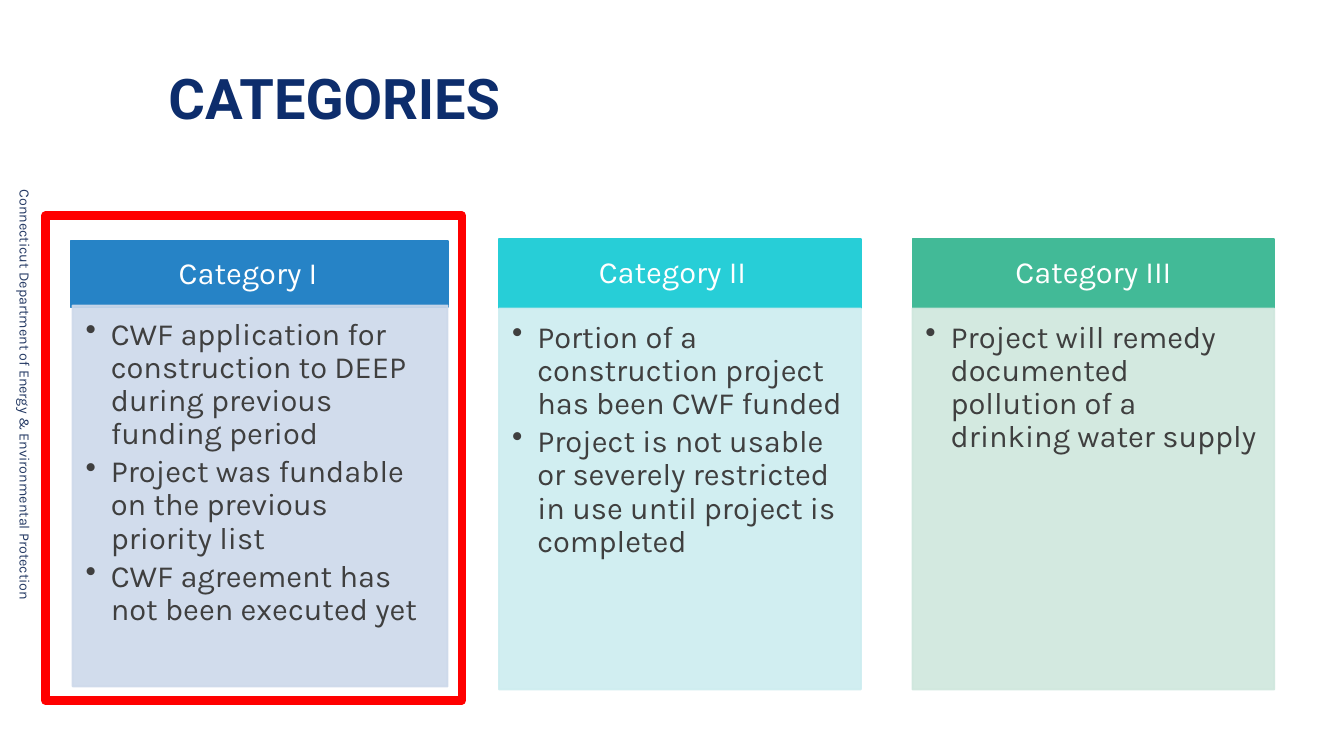
from lxml import etree
from pptx import Presentation, util as u
from pptx.dml.color import RGBColor
from pptx.enum import shapes, text
from pptx.oxml.ns import qn

WIDTH, HEIGHT = u.Inches(13.33), u.Inches(7.5)

# Header and panel boxes: left, top, width, height in percent of the slide.
# Each trailing blank of a header is given as extra right inset, in inches.
CATEGORIES = [
    dict(label="Category I", trailing=0.22, header_color="2683C6", panel_color="CDD9EA",
         header_box=(5.25, 31.87, 28.06, 8.8), panel_box=(5.4, 40.4, 27.91, 50.4),
         criteria=["CWF application for construction to DEEP during previous funding period",
                   "Project was fundable on the previous priority list",
                   "CWF agreement has not been executed yet"]),
    dict(label="Category\u00a0II".replace("\u00a0", " "), trailing=0.15,
         header_color="27CED7", panel_color="CDEDF0",
         header_box=(37.13, 31.6, 26.93, 9.2), panel_box=(37.13, 40.8, 26.93, 50.4),
         criteria=["Portion of a construction project has been CWF funded",
                   "Project is not usable or severely restricted in use until project is completed"]),
    dict(label="Category III", trailing=0, header_color="42BA97", panel_color="CFE7DD",
         header_box=(67.89, 31.6, 26.93, 9.2), panel_box=(67.89, 40.8, 26.93, 50.4),
         criteria=["Project will remedy documented pollution of a drinking water supply"]),
]


def color(hex_code):
    return RGBColor.from_string(hex_code)


def area(left, top, width, height):
    """Turn percent of the slide into lengths."""
    return (int(WIDTH * left / 100), int(HEIGHT * top / 100),
            int(WIDTH * width / 100), int(HEIGHT * height / 100))


def place(shape, box):
    shape.left, shape.top, shape.width, shape.height = area(*box)


def set_alpha(shape, percent):
    for fill in shape._element.spPr.iter(qn("a:srgbClr")):
        etree.SubElement(fill, qn("a:alpha")).set("val", str(percent * 1000))


def add_bullet(paragraph):
    props = paragraph._p.get_or_add_pPr()
    props.set("marL", str(u.Inches(0.25)))
    props.set("indent", str(-u.Inches(0.25)))
    etree.SubElement(props, qn("a:buChar")).set("char", "•")


def write(shape, *lines, size, ink, font="Karla", bold=False, align=text.PP_ALIGN.LEFT,
          anchor=text.MSO_ANCHOR.MIDDLE, insets=(0, 0, 0, 0), spacing=1.0, after=0,
          bullets=False):
    frame = shape.text_frame
    frame.auto_size = text.MSO_AUTO_SIZE.NONE
    frame.word_wrap = True
    frame.vertical_anchor = anchor
    (frame.margin_left, frame.margin_top,
     frame.margin_right, frame.margin_bottom) = map(u.Inches, insets)
    for index, line in enumerate(lines):
        paragraph = frame.add_paragraph() if index else frame.paragraphs[0]
        paragraph.alignment = align
        paragraph.line_spacing = spacing
        paragraph.space_before = u.Pt(0)
        paragraph.space_after = u.Pt(after)
        if bullets:
            paragraph.level = 1
            add_bullet(paragraph)
        run = paragraph.add_run()
        run.text = line
        run.font.name, run.font.size, run.font.bold = font, u.Pt(size), bold
        run.font.color.rgb = color(ink)


def add_rectangle(slide, box, outline, weight=1.25, fill=None):
    rectangle = slide.shapes.add_shape(shapes.MSO_SHAPE.RECTANGLE, *area(*box))
    rectangle.shadow.inherit = False
    if fill:
        rectangle.fill.solid()
        rectangle.fill.fore_color.rgb = color(fill)
    else:
        rectangle.fill.background()
    rectangle.line.color.rgb = color(outline)
    rectangle.line.width = u.Pt(weight)
    return rectangle


def add_category(slide, label, trailing, header_color, panel_color,
                 header_box, panel_box, criteria):
    header = add_rectangle(slide, header_box, header_color, fill=header_color)
    write(header, label, size=22, ink="FFFFFF", align=text.PP_ALIGN.CENTER,
          insets=(0.17, 0.1, 0.17 + trailing, 0.1), spacing=0.9)

    panel = add_rectangle(slide, panel_box, panel_color, fill=panel_color)
    set_alpha(panel, 90)
    write(panel, *criteria, size=22, ink="3F3F3F", anchor=text.MSO_ANCHOR.TOP,
          insets=(0.13, 0.13, 0.17, 0.19), spacing=0.9, after=3.3, bullets=True)


def main():
    deck = Presentation()
    deck.slide_width, deck.slide_height = WIDTH, HEIGHT
    slide = deck.slides.add_slide(deck.slide_layouts[5])

    # Title
    title = slide.shapes.title
    place(title, (12.53, 7.33, 82.37, 12.8))
    write(title, "CATEGORIES", size=40, ink="0D2D6C", font="Roboto", bold=True, spacing=0.8)

    # Department name along the left edge
    department = slide.shapes.add_textbox(*area(-15, 52.4, 33.76, 5.33))
    department.rotation = 90
    write(department, "Connecticut Department of Energy & Environmental Protection",
          size=10.2, ink="253A64", insets=(0, 0.05, 0, 0.05), after=6)

    # Category columns
    for category in CATEGORIES:
        add_category(slide, **category)

    # Highlight around the first category
    add_rectangle(slide, (3.38, 28.53, 30.98, 64.13), "FF0000", weight=6)

    deck.save("out.pptx")


if __name__ == "__main__":
    main()
